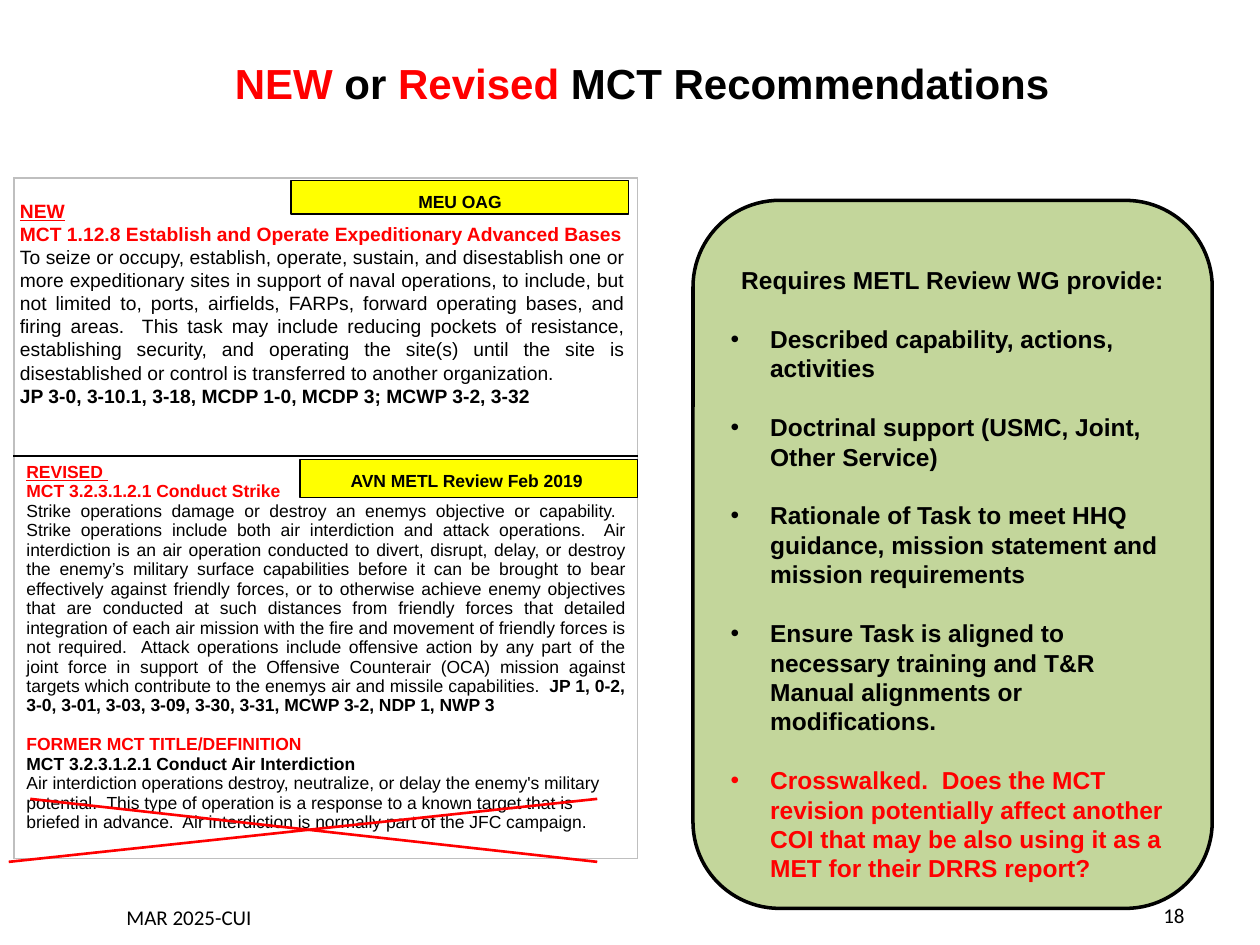
from dataclasses import dataclass, field
from typing import Any, NamedTuple

import lxml.etree
import pptx
import pptx.dml.color
import pptx.enum.shapes
import pptx.enum.text
import pptx.oxml.ns
import pptx.util

Pt = pptx.util.Pt
Align = pptx.enum.text.PP_ALIGN
Anchor = pptx.enum.text.MSO_ANCHOR
Shape = pptx.enum.shapes.MSO_SHAPE
qn = pptx.oxml.ns.qn

BLACK, RED, YELLOW, GREEN, GREY = "000000", "FF0000", "FFFF00", "C3D69B", "BFBFBF"


class Run(NamedTuple):
    text: str
    color: str = BLACK
    bold: bool = True
    under: bool = False


@dataclass
class Para:
    runs: list[Run]
    align: Any = Align.LEFT
    before: float = 0
    bullet: bool = False


@dataclass
class Style:
    size: float
    font: str = "Arial"
    pitch: Any = None
    frame: dict = field(default_factory=dict)


class Box(NamedTuple):
    left: float
    top: float
    width: float
    height: float


def tint(color: str) -> pptx.dml.color.RGBColor:
    return pptx.dml.color.RGBColor.from_string(color)


def assign(thing: Any, values: dict) -> None:
    for name, value in values.items():
        setattr(thing, name, value)


def write(frame: Any, paras: list[Para], style: Style) -> None:
    assign(frame, {"word_wrap": True, **style.frame})
    for i, para in enumerate(paras):
        p = frame.paragraphs[0] if i == 0 else frame.add_paragraph()
        if para.bullet:
            props = p._p.get_or_add_pPr()
            props.set("marL", str(Pt(22.5)))
            props.set("indent", str(-Pt(22.5)))
            mark = lxml.etree.SubElement(props, qn("a:buFont"))
            mark.set("typeface", "Arial")
            lxml.etree.SubElement(props, qn("a:buChar")).set("char", "•")
        assign(p, {"alignment": para.align, "space_before": Pt(para.before)})
        if style.pitch:
            p.line_spacing = style.pitch
        for item in para.runs:
            run = p.add_run()
            run.text = item.text
            assign(run.font, {"name": style.font, "size": Pt(style.size),
                              "bold": item.bold, "underline": item.under})
            run.font.color.rgb = tint(item.color)


def add_text(slide: Any, box: Box, paras: list[Para], style: Style) -> None:
    area = slide.shapes.add_textbox(*map(Pt, box))
    write(area.text_frame, paras, style)


def add_panel(slide: Any, kind: Any, box: Box, fill: str, line: float,
              paras: list[Para], style: Style) -> None:
    panel = slide.shapes.add_shape(kind, *map(Pt, box))
    panel.shadow.inherit = False
    panel.fill.solid()
    panel.fill.fore_color.rgb = tint(fill)
    panel.line.color.rgb = tint(BLACK)
    panel.line.width = Pt(line)
    write(panel.text_frame, paras, style)


def add_line(slide: Any, ends: Box) -> None:
    line = slide.shapes.add_connector(
        pptx.enum.shapes.MSO_CONNECTOR.STRAIGHT, *map(Pt, ends))
    line.line.color.rgb = tint(RED)
    line.line.width = Pt(1.5)
    lxml.etree.SubElement(line._element.spPr, qn("a:effectLst"))


def edge(cell: Any, sides: dict[str, str]) -> None:
    props = cell._tc.get_or_add_tcPr()
    for i, (side, color) in enumerate(sides.items()):
        line = lxml.etree.Element(qn("a:" + side), w=str(Pt(1)))
        fill = lxml.etree.SubElement(line, qn("a:solidFill"))
        lxml.etree.SubElement(fill, qn("a:srgbClr"), val=color)
        props.insert(i, line)


NEW = [
    Para([Run("NEW", RED, under=True)]),
    Para([Run("MCT 1.12.8 Establish and Operate Expeditionary Advanced Bases", RED)]),
    Para([Run("To seize or occupy, establish, operate, sustain, and disestablish one or more "
              "expeditionary sites in support of naval operations, to include, but not limited to, "
              "ports, airfields, FARPs, forward operating bases, and firing areas.  This task may "
              "include reducing pockets of resistance, establishing security, and operating the "
              "site(s) until the site is disestablished or control is transferred to another "
              "organization.", bold=False)], Align.JUSTIFY),
    Para([Run("JP 3-0, 3-10.1, 3-18, MCDP 1-0, MCDP 3; MCWP 3-2, 3-32")]),
]
REVISED = [
    Para([Run("REVISED ", RED, under=True)], Align.JUSTIFY),
    Para([Run("MCT 3.2.3.1.2.1 Conduct Strike", RED)], Align.JUSTIFY),
    Para([Run("Strike operations damage or destroy an enemys objective or capability.  Strike "
              "operations include both air interdiction and attack operations.  Air interdiction "
              "is an air operation conducted to divert, disrupt, delay, or destroy the enemy’s "
              "military surface capabilities before it can be brought to bear effectively against "
              "friendly forces, or to otherwise achieve enemy objectives that are conducted at "
              "such distances from friendly forces that detailed integration of each air mission "
              "with the fire and movement of friendly forces is not required.  Attack operations "
              "include offensive action by any part of the joint force in support of the Offensive "
              "Counterair (OCA) mission against targets which contribute to the enemys air and "
              "missile capabilities.  ", bold=False),
          Run("JP 1, 0-2, 3-0, 3-01, 3-03, 3-09, 3-30, 3-31, MCWP 3-2, NDP 1, NWP 3")],
         Align.JUSTIFY),
    Para([Run("FORMER MCT TITLE/DEFINITION", RED)], before=11.15),
    Para([Run("MCT 3.2.3.1.2.1 Conduct Air Interdiction")]),
    Para([Run("Air interdiction operations destroy, neutralize, or delay the enemy's military "
              "potential.  This type of operation is a response to a known target that is briefed "
              "in advance.  Air interdiction is normally part of the JFC campaign.", bold=False)]),
]
NEEDS = [
    Run("Described capability, actions, activities"),
    Run("Doctrinal support (USMC, Joint, Other Service)"),
    Run("Rationale of Task to meet HHQ guidance, mission statement and mission requirements"),
    Run("Ensure Task is aligned to necessary training and T&R Manual alignments or modifications."),
    Run("Crosswalked.  Does the MCT revision potentially affect another COI that may be also "
        "using it as a MET for their DRRS report?", RED),
]
LABELS = [("MEU OAG", Box(166.3, 103, 193, 19.4)),
          ("AVN METL Review Feb 2019 ", Box(171.4, 262.8, 193, 21.6))]
FOOTERS = [("MAR 2025-CUI", Box(4.3, 509.8, 207.4, 28.8), Align.CENTER),
           ("18", Box(516.2, 508.3, 167.8, 28.8), Align.RIGHT)]
CROSS = [Box(17.3, 456.5, 341.3, 492.5), Box(5, 492.5, 341.3, 456.5)]


def main() -> None:
    deck = pptx.Presentation()
    assign(deck, {"slide_width": Pt(720), "slide_height": Pt(540)})
    slide = deck.slides.add_slide(deck.slide_layouts[5])

    # Title
    title = slide.shapes.title
    assign(title, dict(zip(Box._fields, map(Pt, Box(0, 15, 720, 90)))))
    write(title.text_frame,
          [Para([Run("NEW", RED), Run(" or "), Run("Revised ", RED),
                 Run("MCT Recommendations")], Align.CENTER)],
          Style(24, frame={"vertical_anchor": Anchor.MIDDLE, "margin_left": Pt(21),
                           "margin_bottom": Pt(29)}))

    # Task table
    table = slide.shapes.add_table(2, 1, Pt(7.9), Pt(101.6), Pt(356.4), Pt(389)).table
    assign(table, {"first_row": False, "horz_banding": False})
    sides = {"lnL": GREY, "lnR": GREY, "lnT": GREY, "lnB": GREY}
    rules = [{**sides, "lnB": BLACK}, {**sides, "lnT": BLACK}]
    for i, (height, rule) in enumerate(zip((159, 230), rules)):
        table.rows[i].height = Pt(height)
        cell = table.cell(i, 0)
        cell.fill.background()
        edge(cell, rule)
    write(table.cell(1, 0).text_frame, REVISED, Style(10, pitch=Pt(11.15)))
    add_text(slide, Box(4.3, 110.2, 360, 127.4), NEW, Style(11, pitch=Pt(13.2)))

    # Source labels
    for text, box in LABELS:
        add_panel(slide, Shape.RECTANGLE, box, YELLOW, 0.75,
                  [Para([Run(text)], Align.CENTER)],
                  Style(10, pitch=1.2, frame={"vertical_anchor": Anchor.TOP}))

    # Requirements panel
    needs = [Para([Run("Requires METL Review WG provide:")], Align.CENTER)]
    needs += [Para([run], before=16.8, bullet=True) for run in NEEDS]
    add_panel(slide, Shape.ROUNDED_RECTANGLE, Box(396, 114.5, 296.7, 404.6), GREEN, 2, needs,
              Style(14, pitch=Pt(16.8),
                    frame={"vertical_anchor": Anchor.MIDDLE, "margin_top": Pt(26)}))

    # Strike-out of the former definition
    for ends in CROSS:
        add_line(slide, ends)

    # Footer
    for text, box, align in FOOTERS:
        add_text(slide, box, [Para([Run(text, bold=False)], align)],
                 Style(12, "Calibri", frame={"vertical_anchor": Anchor.MIDDLE}))

    deck.save("out.pptx")


if __name__ == "__main__":
    main()
